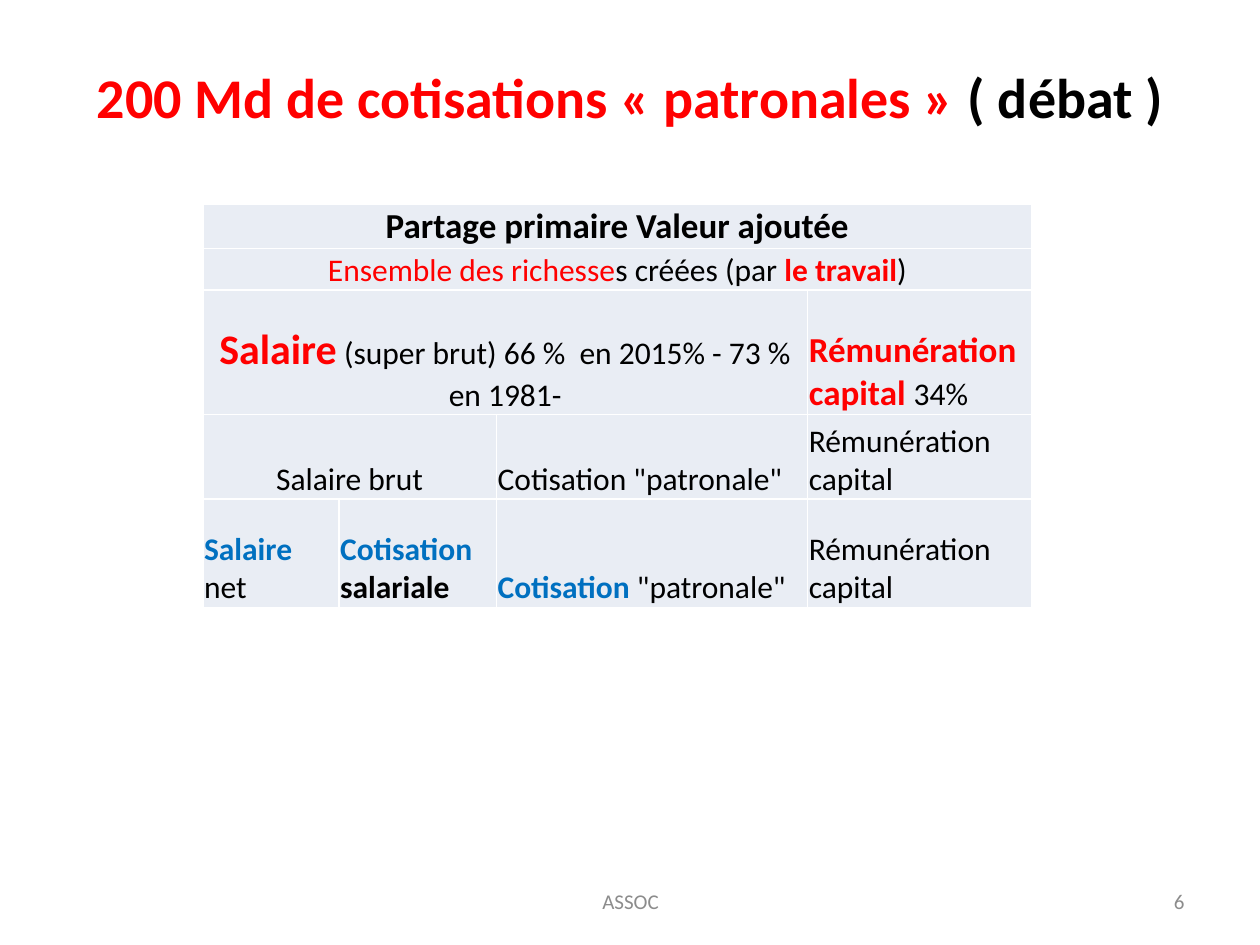
from dataclasses import dataclass

from pptx import Presentation
from pptx import util as u
from pptx.dml import color
from pptx.enum import text as t

PX = 9144


@dataclass(frozen=True)
class Theme:
    """Colours and type sizes of the slide."""
    font: str = "Calibri"
    red: str = "FF0000"
    blue: str = "0070C0"
    black: str = "000000"
    grey: str = "8C8C8C"
    cell: str = "E9EDF4"
    title: int = 32
    big: int = 24
    head: int = 20
    body: int = 18
    small: int = 12


TH = Theme()
LEFT, MID, RIGHT = t.PP_ALIGN.LEFT, t.PP_ALIGN.CENTER, t.PP_ALIGN.RIGHT


@dataclass(frozen=True)
class Run:
    """A stretch of text in one format."""
    text: str
    size: int = TH.body
    hue: str = TH.black
    bold: bool = False


@dataclass(frozen=True)
class Cell:
    """A table cell, with the columns it spans."""
    runs: tuple[Run, ...]
    span: int = 1
    align: t.PP_ALIGN = LEFT


@dataclass(frozen=True)
class Note:
    """A line of text at the foot of the slide."""
    text: str
    left: int
    width: int
    align: t.PP_ALIGN


COLS = (108, 125, 247, 178)
ROWS = (33, 33, 99, 67, 86)
CAPITAL = Cell((Run("Rémunération capital"),))
GRID = (
    (Cell((Run("Partage primaire Valeur ajoutée", TH.head, bold=True),), 4, MID),),
    (Cell((Run("Ensemble des richesse", hue=TH.red), Run("s créées (par "),
           Run("le travail", hue=TH.red, bold=True), Run(")")), 4, MID),),
    (Cell((Run("Salaire", TH.big, TH.red, True),
           Run(" (super brut) 66 %  en 2015% - 73 % en 1981-")), 3, MID),
     Cell((Run("Rémunération capital ", TH.head, TH.red, True), Run("34%")))),
    (Cell((Run("Salaire brut"),), 2, MID),
     Cell((Run('Cotisation "patronale"'),)), CAPITAL),
    (Cell((Run("Salaire", hue=TH.blue, bold=True), Run(" net"))),
     Cell((Run("Cotisation ", hue=TH.blue, bold=True), Run("salariale", bold=True))),
     Cell((Run("Cotisation", hue=TH.blue, bold=True), Run(' "patronale"'))), CAPITAL),
)
TITLE = (Run("200 Md de cotisations « patronales » ", TH.title, TH.red, True),
         Run("( débat )", TH.title, bold=True))
NOTES = (Note("ASSOC", 342, 317, MID), Note("6", 717, 233, RIGHT))


def write(frame, runs: tuple[Run, ...], *, align=LEFT, anchor=t.MSO_ANCHOR.MIDDLE) -> None:
    """Fill a text frame with one paragraph of formatted runs."""
    frame.word_wrap = True
    frame.vertical_anchor = anchor
    para = frame.paragraphs[0]
    para.alignment = align
    for item in runs:
        run = para.add_run()
        run.text = item.text
        font = run.font
        font.name, font.size, font.bold = TH.font, u.Pt(item.size), item.bold
        font.color.rgb = color.RGBColor.from_string(item.hue)


def add_title(slide) -> None:
    """Place and write the title."""
    box = slide.shapes.title
    box.left, box.top, box.width, box.height = (n * PX for n in (50, 30, 900, 93))
    write(box.text_frame, TITLE, align=MID)


def add_grid(slide) -> None:
    """Draw the table of shares."""
    table = slide.shapes.add_table(len(ROWS), len(COLS), 161 * PX, 162 * PX,
                                   sum(COLS) * PX, sum(ROWS) * PX).table
    table.first_row = table.horz_banding = False
    for col, width in zip(table.columns, COLS):
        col.width = width * PX
    for row, height in zip(table.rows, ROWS):
        row.height = height * PX
    for cell in table.iter_cells():
        cell.margin_left = cell.margin_right = cell.margin_top = PX
        cell.margin_bottom = 0
        cell.fill.solid()
        cell.fill.fore_color.rgb = color.RGBColor.from_string(TH.cell)
    for y, row in enumerate(GRID):
        x = 0
        for item in row:
            cell = table.cell(y, x)
            if item.span > 1:
                cell.merge(table.cell(y, x + item.span - 1))
            write(cell.text_frame, item.runs, align=item.align)
            cell.vertical_anchor = t.MSO_ANCHOR.BOTTOM
            x += item.span


def add_note(slide, note: Note) -> None:
    """Draw one footer text."""
    box = slide.shapes.add_textbox(note.left * PX, 695 * PX, note.width * PX, 40 * PX)
    write(box.text_frame, (Run(note.text, TH.small, TH.grey),), align=note.align)


def main() -> None:
    """Build and save the slide."""
    deck = Presentation()
    deck.slide_width, deck.slide_height = 1000 * PX, 750 * PX
    slide = deck.slides.add_slide(deck.slide_layouts[5])
    add_title(slide)
    add_grid(slide)
    for note in NOTES:
        add_note(slide, note)
    deck.save("out.pptx")


if __name__ == "__main__":
    main()
